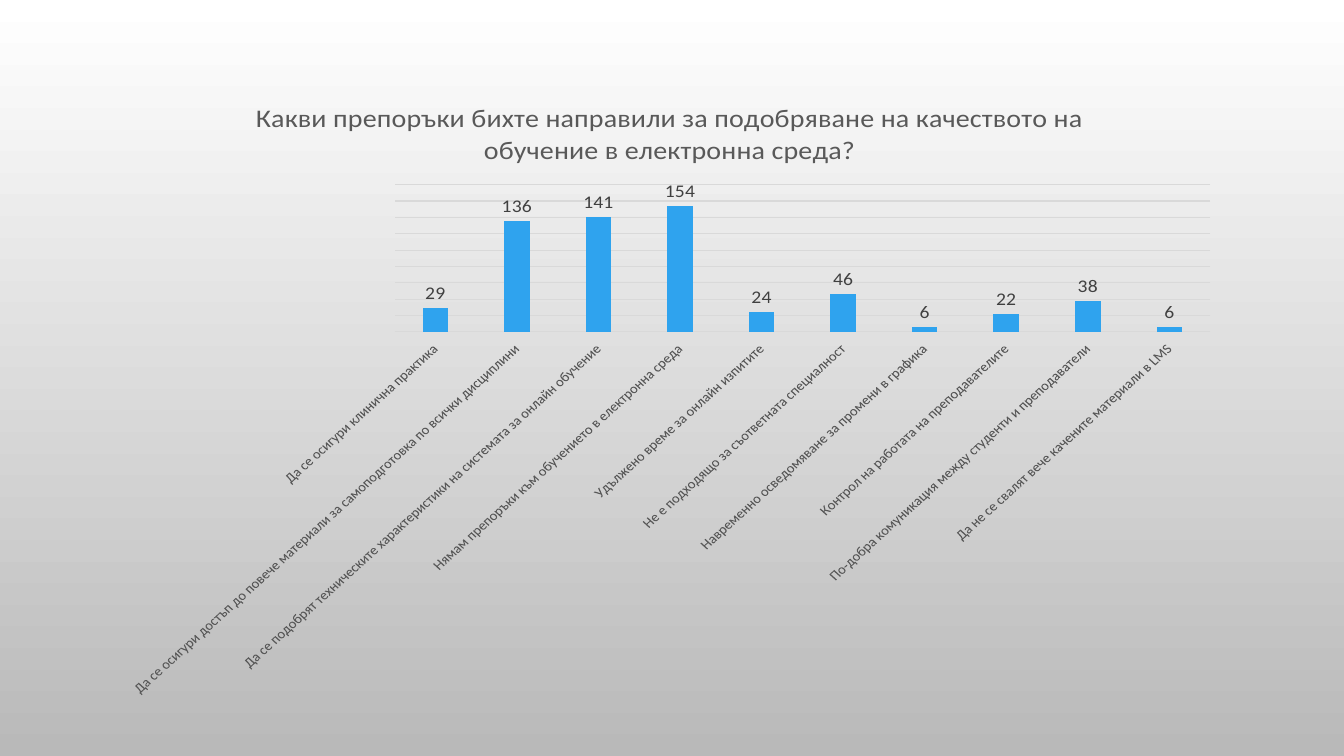
from lxml import etree
from pptx import Presentation
from pptx.chart.data import CategoryChartData
from pptx.dml.color import RGBColor
from pptx.enum.chart import XL_CHART_TYPE, XL_LABEL_POSITION, XL_TICK_LABEL_POSITION, XL_TICK_MARK
from pptx.oxml.ns import qn
from pptx.util import Pt

COLUMN_CLUSTERED = XL_CHART_TYPE.COLUMN_CLUSTERED
OUTSIDE_END = XL_LABEL_POSITION.OUTSIDE_END
LOW = XL_TICK_LABEL_POSITION.LOW
NO_TICKS = XL_TICK_MARK.NONE

WHITE = RGBColor(0xFF, 0xFF, 0xFF)
SILVER = RGBColor(0xB9, 0xB9, 0xB9)
GRID_GRAY = RGBColor(0xD9, 0xD9, 0xD9)
TEXT_GRAY = RGBColor(0x59, 0x59, 0x59)
LABEL_GRAY = RGBColor(0x40, 0x40, 0x40)
BAR_BLUE = RGBColor(0x2F, 0xA3, 0xEE)
BLACK = RGBColor(0, 0, 0)
FONT = "Calibri"

QUESTION = "Какви препоръки бихте направили за подобряване на качеството на обучение в електронна среда?"
ANSWERS = {
    "Да се осигури клинична практика": 29,
    "Да се осигури достъп до повече материали за самоподготовка по всички дисциплини": 136,
    "Да се подобрят техническите характеристики на системата за онлайн обучение": 141,
    "Нямам препоръки към обучението в електронна среда": 154,
    "Удължено време за онлайн изпитите": 24,
    "Не е подходящо за съответната специалност": 46,
    "Навременно осведомяване за промени в графика": 6,
    "Контрол на работата на преподавателите": 22,
    "По-добра комуникация между студенти и преподаватели": 38,
    "Да не се свалят вече качените материали в LMS": 6,
}


def style_font(font, size, color):
    font.name = FONT
    font.size = Pt(size)
    font.bold = False
    font.color.rgb = color


def style_line(line):
    line.color.rgb = GRID_GRAY
    line.width = Pt(0.75)


def paint_background(slide):
    fill = slide.background.fill
    fill.gradient()
    fill.gradient_angle = 270
    for stop, color, position in zip(fill.gradient_stops, (WHITE, SILVER), (0, 1)):
        stop.color.rgb = color
        stop.position = position


def add_answers_chart(slide):
    answers = CategoryChartData()
    answers.categories = list(ANSWERS)
    answers.add_series("Series 1", list(ANSWERS.values()))
    chart = slide.shapes.add_chart(
        COLUMN_CLUSTERED, Pt(76.3), Pt(56.9), Pt(804.2), Pt(440.6), answers
    ).chart
    chart.has_legend = False
    style_font(chart.font, 10, BLACK)
    return chart


def add_question(chart):
    chart.has_title = True
    run = chart.chart_title.text_frame.paragraphs[0].add_run()
    run.text = QUESTION
    style_font(run.font, 20, TEXT_GRAY)
    etree.SubElement(chart.chart_title._element, qn("c:overlay")).set("val", "0")


def style_axes(chart):
    answer_axis = chart.category_axis
    answer_axis.major_tick_mark = NO_TICKS
    answer_axis.tick_label_position = LOW
    style_font(answer_axis.tick_labels.font, 10.5, TEXT_GRAY)
    style_line(answer_axis.format.line)
    body = answer_axis._element.find(qn("c:txPr")).find(qn("a:bodyPr"))
    body.set("rot", "-2700000")

    count_axis = chart.value_axis
    count_axis.visible = False
    count_axis.minimum_scale = 0
    count_axis.maximum_scale = 180
    count_axis.major_unit = 20
    count_axis.has_major_gridlines = True
    style_line(count_axis.major_gridlines.format.line)


def style_bars(chart):
    plot = chart.plots[0]
    plot.gap_width = 219
    plot.overlap = -27
    plot.vary_by_categories = False
    bars = plot.series[0]
    bars.format.fill.solid()
    bars.format.fill.fore_color.rgb = BAR_BLUE
    counts = bars.data_labels
    counts.show_value = True
    counts.position = OUTSIDE_END
    style_font(counts.font, 14, LABEL_GRAY)


def main():
    deck = Presentation()
    deck.slide_width = Pt(960)
    deck.slide_height = Pt(540)
    slide = deck.slides.add_slide(deck.slide_layouts[6])
    paint_background(slide)
    chart = add_answers_chart(slide)
    add_question(chart)
    style_axes(chart)
    style_bars(chart)
    deck.save("out.pptx")


if __name__ == "__main__":
    main()
